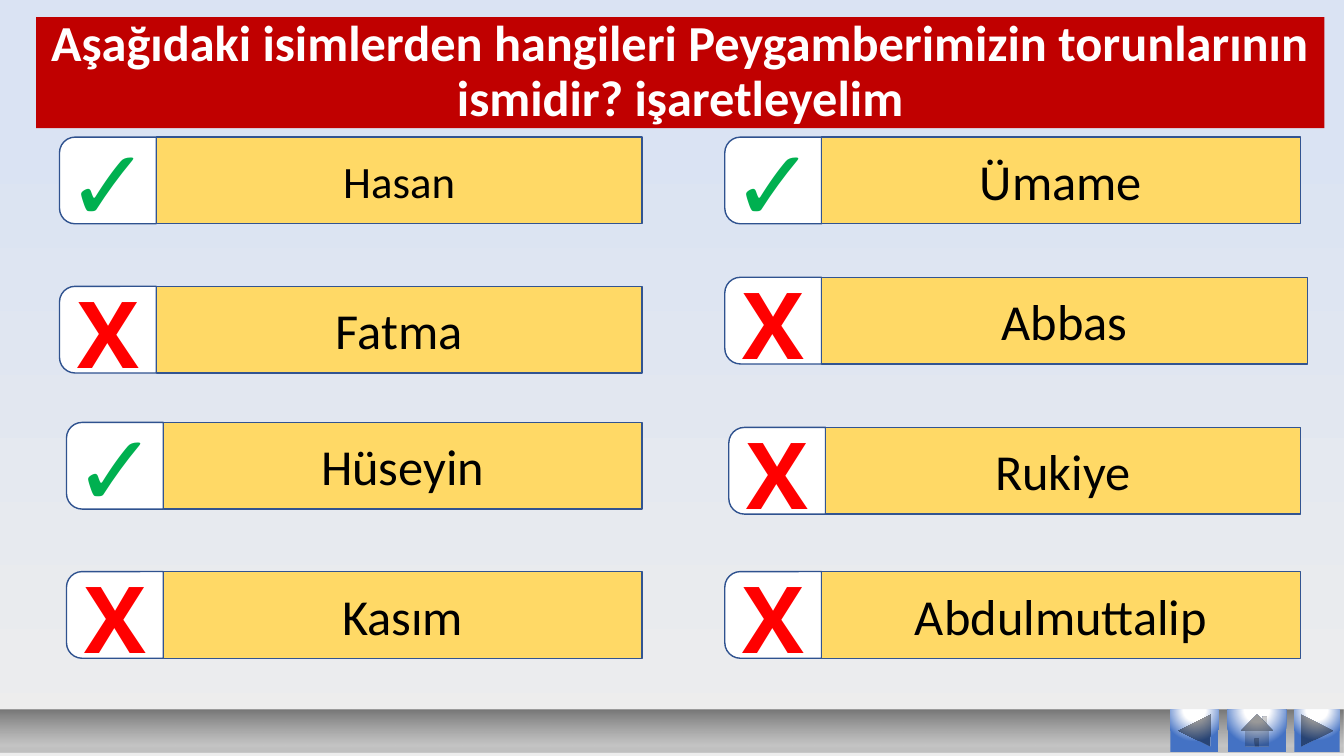
from dataclasses import dataclass
from lxml import etree
from pptx import Presentation
from pptx.dml.color import RGBColor as RGB
from pptx.enum.shapes import MSO_SHAPE as SHAPE
from pptx.enum.text import MSO_ANCHOR as ANCHOR, PP_ALIGN as ALIGN
from pptx.oxml.ns import qn
from pptx.util import Inches, Pt


@dataclass(frozen=True)
class Theme:
    title_fill: str = "C00000"
    tab_fill: str = "FFFFFF"
    tab_line: str = "2F528F"
    name_fill: str = "FFD966"
    name_line: str = "325491"
    backdrop: tuple = ((0, "EDEDED", 100), (84, "DAE3F3", 100))
    bar: tuple = ((0, "C0C0C0", 100), (17, "B3B3B3", 70), (100, "777777", 100))
    button: tuple = ((0, "FFFFFF", 100), (35, "FFFFFF", 100), (100, "4472C4", 100))
    title_font: tuple = ("Calibri", 36, "FFFFFF", True)
    name_font: tuple = ("Calibri", 36, "000000", False)
    small_name_font: tuple = ("Calibri", 32, "000000", False)
    right_font: tuple = ("TeX Gyre Bonum", 72, "00B050", True)
    wrong_font: tuple = ("Open Sans", 66, "FF0000", True)


THEME = Theme()
WIDTH, HEIGHT = Inches(13.333), Inches(7.5)
COL, ROW = WIDTH / 100, HEIGHT / 100
TAB_COLS, ANSWER_ROWS = 7.2, 11.47

ANSWERS = [
    ("Hasan", True, (4.43, 18.13), 47.78, THEME.small_name_font),
    ("Fatma", False, (4.43, 37.87), 47.78, THEME.name_font),
    ("Hüseyin", True, (4.95, 55.87), 47.78, THEME.name_font),
    ("Kasım", False, (4.95, 75.6), 47.78, THEME.name_font),
    ("Ümame", True, (53.93, 18.13), 96.75, THEME.name_font),
    ("Abbas", False, (53.93, 36.67), 97.28, THEME.name_font),
    ("Rukiye", False, (54.23, 56.53), 96.75, THEME.name_font),
    ("Abdulmuttalip", False, (53.93, 75.6), 96.75, THEME.name_font),
]
MARKS = {
    True: ("✓", (-1.73, -2.8, 10.73, 17.47), THEME.right_font),
    False: ("X", (0.53, -2, 6.15, 16.13), THEME.wrong_font),
}
BUTTONS = [
    (SHAPE.ACTION_BUTTON_BACK_OR_PREVIOUS, 87.08, 3.6),
    (SHAPE.ACTION_BUTTON_HOME, 91.35, 4.35),
    (SHAPE.ACTION_BUTTON_FORWARD_OR_NEXT, 96.3, 3.38),
]


def to_emu(box):
    return [int(v * unit) for v, unit in zip(box, (COL, ROW, COL, ROW))]


def set_gradient(parent, stops, radial=False):
    solid = parent.find(qn("a:solidFill"))
    grad = etree.Element(qn("a:gradFill"), rotWithShape="1")
    stop_list = etree.SubElement(grad, qn("a:gsLst"))
    for pos, color, opacity in stops:
        gs = etree.SubElement(stop_list, qn("a:gs"), pos=str(pos * 1000))
        clr = etree.SubElement(gs, qn("a:srgbClr"), val=color)
        if opacity < 100:
            etree.SubElement(clr, qn("a:alpha"), val=str(opacity * 1000))
    if radial:
        circle = etree.SubElement(grad, qn("a:path"), attrib={"path": "circle"})
        etree.SubElement(circle, qn("a:fillToRect"),
                         l="50000", t="-80000", r="50000", b="180000")
    else:
        etree.SubElement(grad, qn("a:lin"), ang=str(270 * 60000), scaled="0")
    parent.replace(solid, grad)


def add_block(s, kind, box, fill, line=None):
    sp = s.shapes.add_shape(kind, *to_emu(box))
    sp.shadow.inherit = False
    sp.fill.solid()
    sp.fill.fore_color.rgb = RGB.from_string(fill)
    if line:
        sp.line.color.rgb = RGB.from_string(line)
        sp.line.width = Pt(1)
    else:
        sp.line.fill.background()
    return sp


def write(sp, text, font, anchor=ANCHOR.MIDDLE, wrap=True, spacing=1.0):
    name, size, color, bold = font
    tf = sp.text_frame
    p = tf.paragraphs[0]
    r = p.add_run()
    r.text = text
    formats = (
        (tf, {"word_wrap": wrap, "vertical_anchor": anchor}),
        (p, {"alignment": ALIGN.CENTER, "line_spacing": spacing}),
        (r.font, {"name": name, "size": Pt(size), "bold": bold}),
    )
    for target, values in formats:
        for key, value in values.items():
            setattr(target, key, value)
    r.font.color.rgb = RGB.from_string(color)


def add_backdrop(s):
    s.background.fill.solid()
    set_gradient(s.element.find(".//" + qn("p:bgPr")), THEME.backdrop)


def add_title(s, box, text):
    sp = add_block(s, SHAPE.RECTANGLE, box, THEME.title_fill)
    write(sp, text, THEME.title_font, spacing=0.9)


def add_tab(s, box):
    sp = add_block(s, SHAPE.ROUND_2_SAME_RECTANGLE, box, THEME.tab_fill, THEME.tab_line)
    sp.adjustments[0] = 0.18
    x, y, w, h = to_emu(box)
    turned = {"left": x + (w - h) // 2, "top": y + (h - w) // 2,
              "width": h, "height": w, "rotation": 270}
    for key, value in turned.items():
        setattr(sp, key, value)


def add_answer(s, box, name, correct, font):
    x, y, w, h = box
    add_tab(s, (x, y, TAB_COLS, h))
    name_box = (x + TAB_COLS, y, w - TAB_COLS, h)
    write(add_block(s, SHAPE.RECTANGLE, name_box, THEME.name_fill, THEME.name_line),
          name, font)
    mark, (dx, dy, mark_w, mark_h), mark_font = MARKS[correct]
    tb = s.shapes.add_textbox(*to_emu((x + dx, y + dy, mark_w, mark_h)))
    write(tb, mark, mark_font, ANCHOR.TOP, wrap=correct)


def add_navigation(s, box):
    x, y, w, h = box
    bar = add_block(s, SHAPE.RECTANGLE, box, THEME.bar[0][1])
    set_gradient(bar.element.spPr, THEME.bar)
    for kind, left, width in BUTTONS:
        button = add_block(s, kind, (x + left, y, width, h), THEME.button[0][1])
        set_gradient(button.element.spPr, THEME.button, radial=True)


def main():
    prs = Presentation()
    prs.slide_width, prs.slide_height = WIDTH, HEIGHT
    s = prs.slides.add_slide(prs.slide_layouts[6])
    add_backdrop(s)
    add_title(s, (2.7, 2.27, 95.85, 14.67),
              "Aşağıdaki isimlerden hangileri Peygamberimizin torunlarının "
              "ismidir? işaretleyelim")
    for name, correct, (x, y), right, font in ANSWERS:
        add_answer(s, (x, y, right - x, ANSWER_ROWS), name, correct, font)
    add_navigation(s, (0, 93.87, 100, 5.6))
    prs.save("out.pptx")


if __name__ == "__main__":
    main()
